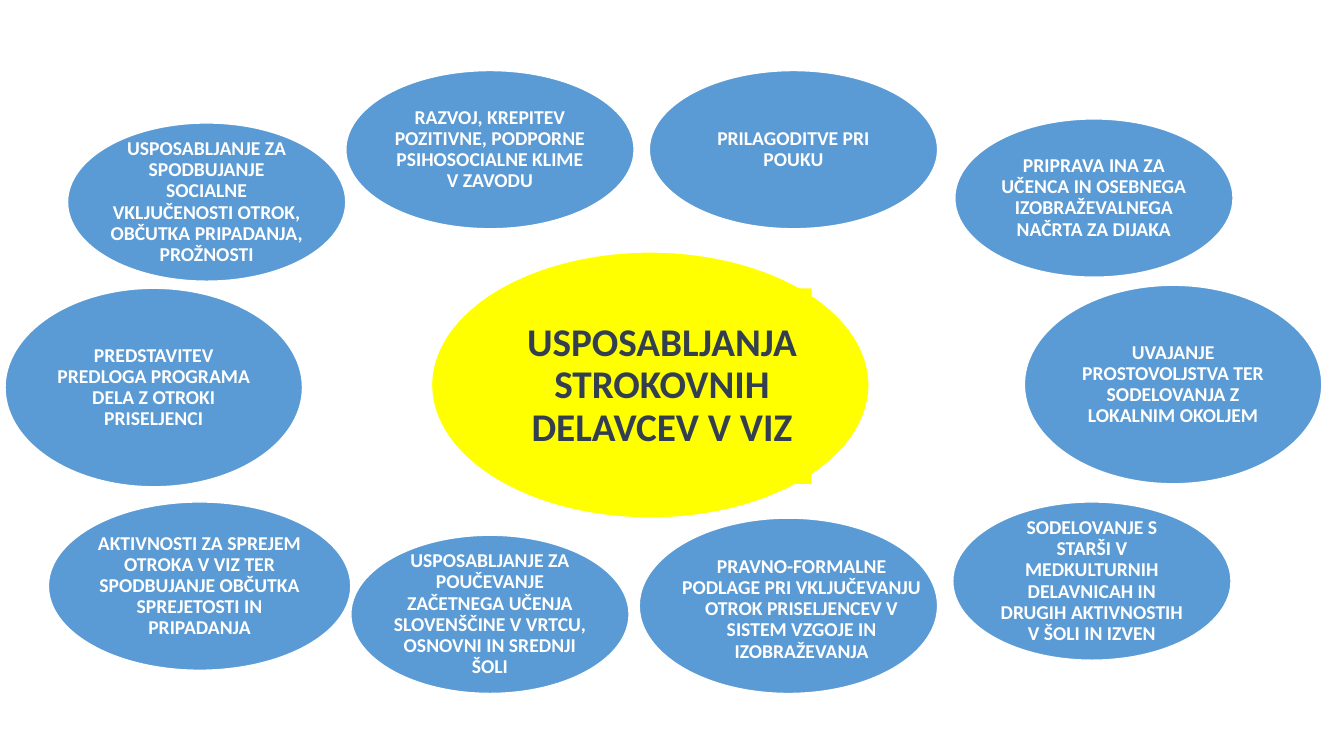
from pptx import Presentation
from pptx.dml.color import RGBColor
from pptx.enum.shapes import MSO_SHAPE
from pptx.enum.text import MSO_ANCHOR, MSO_AUTO_SIZE, PP_ALIGN
from pptx.util import Inches, Pt


def add_ellipse(x, y, w, h, color):
    sp = s.shapes.add_shape(MSO_SHAPE.OVAL, Inches(x), Inches(y), Inches(w), Inches(h))
    sp.shadow.inherit = False
    sp.fill.solid()
    sp.fill.fore_color.rgb = RGBColor.from_string(color)
    sp.line.color.rgb = RGBColor.from_string("FFFFFF")
    sp.line.width = Pt(1)
    return sp


def set_text(sp, text, size, color, inset=0.01):
    tf = sp.text_frame
    tf.text = text
    tf.word_wrap = True
    tf.auto_size = MSO_AUTO_SIZE.NONE
    tf.vertical_anchor = MSO_ANCHOR.MIDDLE
    tf.margin_left = tf.margin_right = Inches(inset)
    tf.margin_top = tf.margin_bottom = Inches(0.01)
    p = tf.paragraphs[0]
    p.alignment = PP_ALIGN.CENTER
    p.line_spacing = 0.9
    p.space_before = Pt(0)
    font = p.runs[0].font
    font.name = "Calibri"
    font.size = Pt(size)
    font.bold = True
    font.color.rgb = RGBColor.from_string(color)


prs = Presentation()
prs.slide_width = Inches(13.33)
prs.slide_height = Inches(7.5)
s = prs.slides.add_slide(prs.slide_layouts[5])

center = add_ellipse(4.28, 2.5, 4.34, 2.64, "FFFF00")
title = s.shapes.title
title.left, title.top = Inches(5.08), Inches(2.86)
title.width, title.height = Inches(2.97), Inches(1.94)
title.fill.solid()
title.fill.fore_color.rgb = RGBColor.from_string("FFFF00")
set_text(title, "USPOSABLJANJA STROKOVNIH DELAVCEV V VIZ", 28, "333F50")
center.element.addnext(title.element)

topics = [
    (6.44, 0.7, 2.86, 1.57, 0.01, "PRILAGODITVE PRI POUKU"),
    (9.47, 1.18, 2.76, 1.57, 0.01,
     "PRIPRAVA INA ZA UČENCA IN OSEBNEGA IZOBRAŽEVALNEGA NAČRTA ZA DIJAKA"),
    (10.16, 2.83, 2.95, 1.97, 0.01,
     "UVAJANJE PROSTOVOLJSTVA TER SODELOVANJA Z LOKALNIM OKOLJEM"),
    (9.45, 4.98, 2.76, 1.57, 0.05,
     "SODELOVANJE S STARŠI V MEDKULTURNIH DELAVNICAH IN DRUGIH AKTIVNOSTIH V ŠOLI IN IZVEN"),
    (3.48, 5.31, 2.76, 1.57, 0.01,
     "USPOSABLJANJE ZA POUČEVANJE ZAČETNEGA UČENJA SLOVENŠČINE V VRTCU, OSNOVNI IN SREDNJI ŠOLI"),
    (0.48, 4.98, 3, 1.67, 0.01,
     "AKTIVNOSTI ZA SPREJEM OTROKA V VIZ TER SPODBUJANJE OBČUTKA SPREJETOSTI IN PRIPADANJA"),
    (0.05, 2.86, 2.95, 1.97, 0.01,
     "PREDSTAVITEV PREDLOGA PROGRAMA DELA Z OTROKI PRISELJENCI"),
    (0.67, 1.22, 2.76, 1.57, 0.01,
     "USPOSABLJANJE ZA SPODBUJANJE SOCIALNE VKLJUČENOSTI OTROK, OBČUTKA PRIPADANJA, PROŽNOSTI"),
    (3.43, 0.7, 2.86, 1.57, 0.01,
     "RAZVOJ, KREPITEV POZITIVNE, PODPORNE PSIHOSOCIALNE KLIME V ZAVODU"),
]
for x, y, w, h, inset, text in topics:
    set_text(add_ellipse(x, y, w, h, "5B9BD5"), text, 14, "FFFFFF", inset)

add_ellipse(6.34, 5.14, 2.96, 1.74, "5B9BD5")
legal = s.shapes.add_textbox(Inches(6.74), Inches(5.29), Inches(2.42), Inches(1.51))
set_text(legal, "PRAVNO-FORMALNE PODLAGE PRI VKLJUČEVANJU OTROK PRISELJENCEV V SISTEM "
         "VZGOJE IN IZOBRAŽEVANJA", 14, "FFFFFF")

prs.save("out.pptx")
